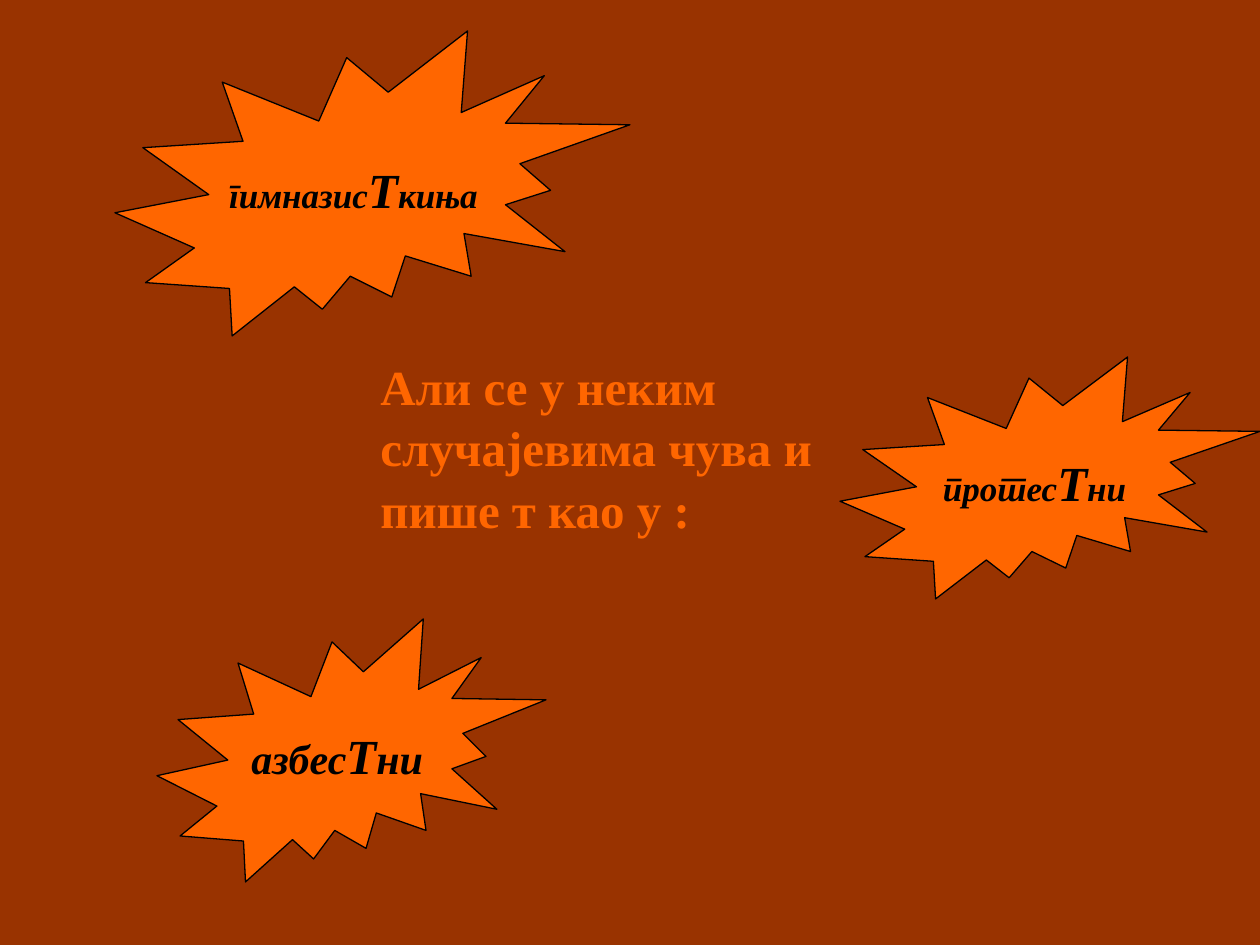
from pptx import Presentation
from pptx.dml.color import RGBColor
from pptx.enum.lang import MSO_LANGUAGE_ID
from pptx.enum.shapes import MSO_SHAPE
from pptx.enum.text import MSO_ANCHOR, PP_ALIGN
from pptx.util import Emu, Pt

SEAL = MSO_SHAPE.EXPLOSION2
MIDDLE = MSO_ANCHOR.MIDDLE
CENTER = PP_ALIGN.CENTER
SERBIAN = MSO_LANGUAGE_ID.SERBIAN_CYRILLIC

SCALE = 914400 // 126
RUST, ORANGE, BLACK = "993300", "FF6600", "000000"
BIG = 28


def px(*vals):
    return [Emu(val * SCALE) for val in vals]


def color(code):
    return RGBColor.from_string(code)


def paint(fill, code):
    fill.solid()
    fill.fore_color.rgb = color(code)


class Board:
    """Holds the text style and the current slide."""

    style = {"name": "Times New Roman", "bold": True, "language_id": SERBIAN}

    def __init__(self, deck):
        self.slide = deck.slides.add_slide(deck.slide_layouts[6])
        paint(self.slide.background.fill, RUST)

    def add_text(self, para, text, size, code, **extra):
        run = para.add_run()
        run.text = text
        values = {**self.style, "size": Pt(size), **extra}
        for key, val in values.items():
            setattr(run.font, key, val)
        run.font.color.rgb = color(code)

    def label(self, box, text):
        frame = self.slide.shapes.add_textbox(*px(*box)).text_frame
        frame.word_wrap = True
        para = frame.paragraphs[0]
        para.line_spacing = 1.05
        self.add_text(para, text, BIG, ORANGE)

    def burst(self, box, parts, size):
        """Draw a seal whose word has a large middle letter."""
        seal = self.slide.shapes.add_shape(SEAL, *px(*box))
        seal.shadow.inherit = False
        paint(seal.fill, ORANGE)
        paint(seal.line.fill, BLACK)
        seal.line.width = Pt(0.75)
        frame = seal.text_frame
        frame.word_wrap = False
        frame.vertical_anchor = MIDDLE
        para = frame.paragraphs[0]
        para.alignment = CENTER
        for part, points in zip(parts, (size, BIG, size)):
            self.add_text(para, part, points, BLACK, italic=True)


def main():
    deck = Presentation()
    deck.slide_width, deck.slide_height = px(1260, 945)
    board = Board(deck)
    board.label((368, 347, 577, 189),
                "Али се у неким случајевима чува и пише т као у :")
    bursts = [
        ((157, 619, 389, 263), ("азбес", "Т", "ни"), 24),
        ((840, 357, 420, 242), ("протес", "Т", "ни"), 20),
        ((115, 31, 515, 305), ("гимназис", "Т", "киња"), 20),
    ]
    for box, parts, size in bursts:
        board.burst(box, parts, size)
    deck.save("out.pptx")


if __name__ == "__main__":
    main()
